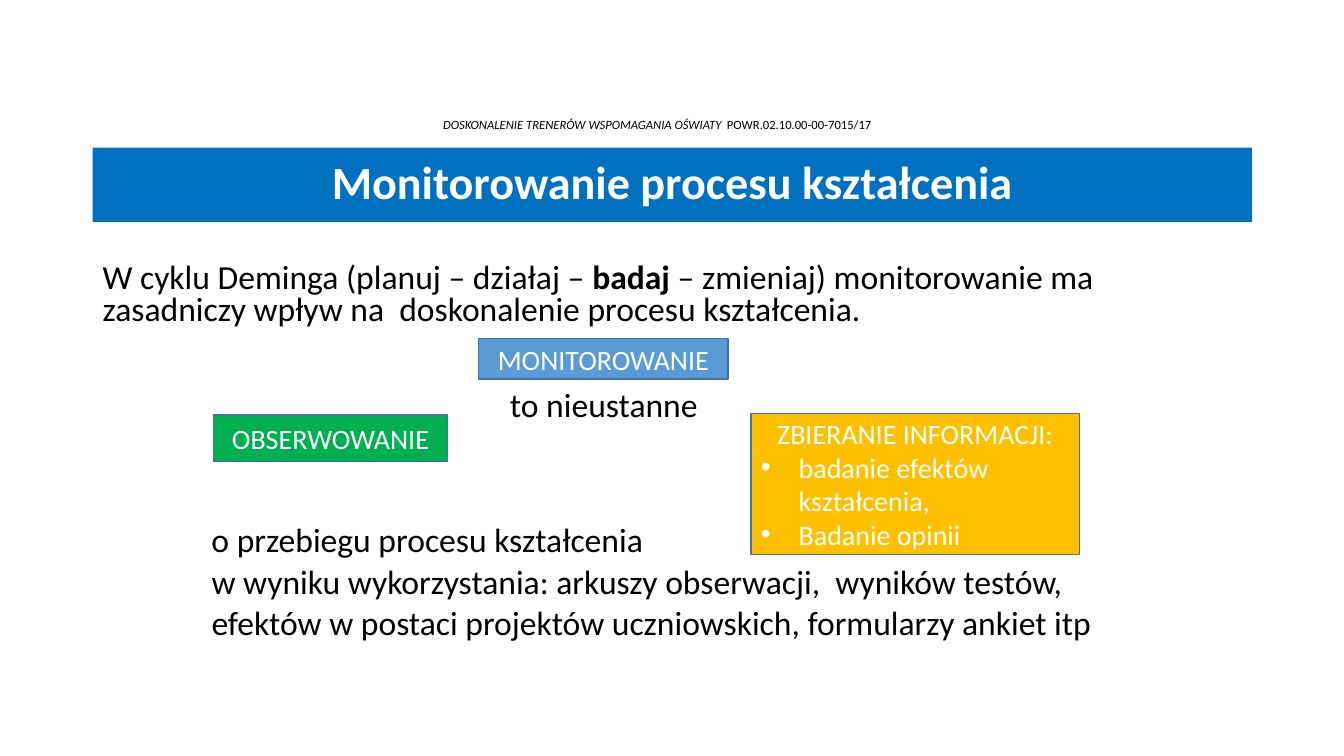
from dataclasses import dataclass

from lxml import etree
from pptx import Presentation
from pptx.dml.color import RGBColor
from pptx.enum.shapes import MSO_SHAPE
from pptx.enum.text import MSO_ANCHOR, PP_ALIGN
from pptx.oxml.ns import qn
from pptx.slide import Slide
from pptx.util import Pt

RECTANGLE = MSO_SHAPE.RECTANGLE
PROCESS = MSO_SHAPE.FLOWCHART_PROCESS
LEFT, CENTER = PP_ALIGN.LEFT, PP_ALIGN.CENTER
TOP, MIDDLE = MSO_ANCHOR.TOP, MSO_ANCHOR.MIDDLE

FONT = "Calibri"
BULLET_INDENT = 27
COLORS = {
    "black": "000000",
    "white": "FFFFFF",
    "title": "0070C0",
    "monitoring": "5B9BD5",
    "observing": "00B050",
    "collecting": "FFC000",
    "outline": "43739E",
}


@dataclass(frozen=True)
class Run:
    text: str
    bold: bool = False
    italic: bool = False


@dataclass(frozen=True)
class Paragraph:
    runs: tuple[Run, ...]
    align: PP_ALIGN = LEFT
    bullet: bool = False
    line_spacing: float = 1.0


@dataclass(frozen=True)
class Block:
    """A text box, or a filled shape when fill is given."""
    left: float
    top: float
    width: float
    height: float
    paragraphs: tuple[Paragraph, ...]
    size: float = 24
    fill: str = ""
    outlined: bool = False
    preset: MSO_SHAPE = RECTANGLE
    wrap: bool = True


def line(text: str, align: PP_ALIGN = LEFT, bullet: bool = False) -> Paragraph:
    return Paragraph((Run(text),), align, bullet)


BLOCKS = (
    # Project header
    Block(56.9, 80, 825.1, 18, (Paragraph((
        Run("DOSKONALENIE TRENERÓW WSPOMAGANIA OŚWIATY  ", italic=True),
        Run("POWR.02.10.00-00-7015/17")), CENTER),), size=9),
    # Title bar
    Block(66.25, 105.4, 828, 53.3, (Paragraph((
        Run("Monitorowanie procesu kształcenia", bold=True),), CENTER,
        line_spacing=0.9),), size=33, fill="title"),
    # Introduction
    Block(66.25, 185, 828, 53.3, (Paragraph((
        Run("W cyklu Deminga (planuj – działaj – "),
        Run("badaj", bold=True),
        Run(" – zmieniaj) monitorowanie ma zasadniczy wpływ na  "
            "doskonalenie procesu kształcenia.")), line_spacing=0.8),)),
    # Monitoring and its two parts
    Block(342, 241.9, 178, 28.8, (line("MONITOROWANIE", CENTER),),
          size=20, fill="monitoring", outlined=True),
    Block(347.8, 270.7, 167, 36, (line("to nieustanne", CENTER),)),
    Block(152.6, 296.6, 167, 33.1, (line("OBSERWOWANIE", CENTER),),
          size=20, fill="observing", outlined=True, preset=PROCESS),
    Block(536.4, 295.2, 234.7, 100.8, (
        line("ZBIERANIE INFORMACJI:", CENTER),
        line("badanie efektów kształcenia,", bullet=True),
        line("Badanie opinii", bullet=True)),
        size=20, fill="collecting", outlined=True),
    # Subject and sources
    Block(144, 367.2, 326.2, 36, (line("o przebiegu procesu kształcenia"),),
          wrap=False),
    Block(144, 397.4, 684.7, 65.5, (line(
        "w wyniku wykorzystania: arkuszy obserwacji,  wyników testów, "
        "efektów w postaci projektów uczniowskich, formularzy ankiet itp"),)),
)


def rgb(name: str) -> RGBColor:
    return RGBColor.from_string(COLORS[name])


def add_bullet(paragraph) -> None:
    properties = paragraph._p.get_or_add_pPr()
    properties.set("marL", str(Pt(BULLET_INDENT)))
    properties.set("indent", str(-Pt(BULLET_INDENT)))
    etree.SubElement(properties, qn("a:buFont"), typeface="Arial")
    etree.SubElement(properties, qn("a:buChar"), char="•")


def write_paragraph(paragraph, content: Paragraph, block: Block) -> None:
    paragraph.alignment = content.align
    paragraph.line_spacing = content.line_spacing
    if content.bullet:
        add_bullet(paragraph)
    for part in content.runs:
        run = paragraph.add_run()
        run.text = part.text
        run.font.name = FONT
        run.font.size = Pt(block.size)
        run.font.bold = part.bold
        run.font.italic = part.italic
        run.font.color.rgb = rgb("white" if block.fill else "black")


def draw_block(slide: Slide, block: Block) -> None:
    place = [Pt(v) for v in (block.left, block.top, block.width, block.height)]
    if block.fill:
        shape = slide.shapes.add_shape(block.preset, *place)
        shape.shadow.inherit = False
        shape.fill.solid()
        shape.fill.fore_color.rgb = rgb(block.fill)
        if block.outlined:
            shape.line.color.rgb = rgb("outline")
            shape.line.width = Pt(1)
        else:
            shape.line.fill.background()
    else:
        shape = slide.shapes.add_textbox(*place)
    frame = shape.text_frame
    frame.word_wrap = block.wrap
    frame.vertical_anchor = MIDDLE if block.fill else TOP
    for index, content in enumerate(block.paragraphs):
        paragraph = frame.add_paragraph() if index else frame.paragraphs[0]
        write_paragraph(paragraph, content, block)


def main() -> None:
    deck = Presentation()
    deck.slide_width, deck.slide_height = Pt(960), Pt(540)
    slide = deck.slides.add_slide(deck.slide_layouts[6])
    for block in BLOCKS:
        draw_block(slide, block)
    deck.save("out.pptx")


if __name__ == "__main__":
    main()
